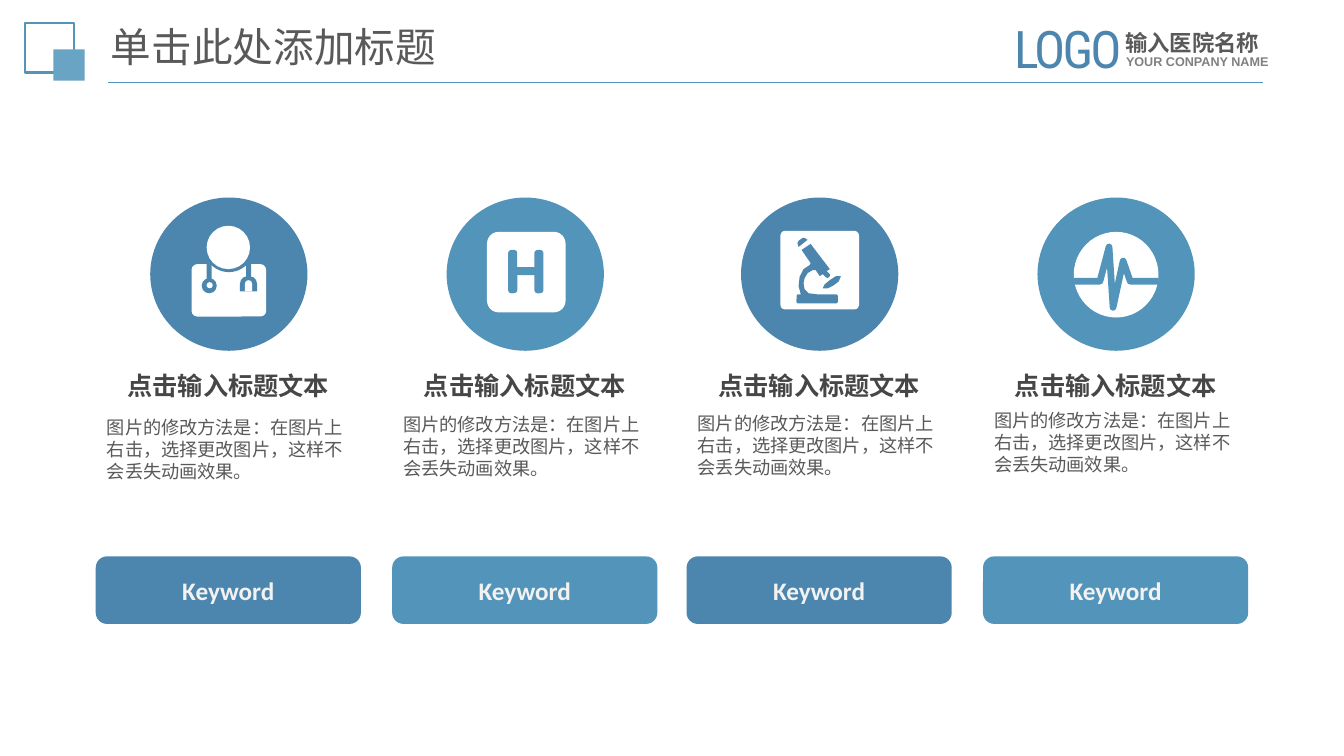
from dataclasses import dataclass

from lxml.etree import SubElement
from pptx import Presentation
from pptx.dml.color import RGBColor as Rgb
from pptx.enum.shapes import MSO_CONNECTOR as Link, MSO_SHAPE as Kind
from pptx.enum.text import MSO_ANCHOR as Anchor, MSO_AUTO_SIZE as Fit, PP_ALIGN as Align
from pptx.oxml.ns import qn
from pptx.shapes.autoshape import Shape
from pptx.slide import Slide
from pptx.text.text import TextFrame
from pptx.util import Inches, Pt

HUES = {
    "deep": "4C86AE", "mid": "5294BA", "pale": "6AA4C4", "white": "FFFFFF",
    "snow": "F2F2F2", "head": "464646", "text": "595959", "grey": "808080",
}
HAN = "Noto Sans CJK SC"
Spot = tuple[float, float]


@dataclass(frozen=True)
class Part:
    kind: Kind
    x: float
    y: float
    w: float
    h: float
    fill: str = ""
    curve: float | None = None
    line: str = ""


@dataclass(frozen=True)
class Path:
    spots: tuple[Spot, ...]
    hue: str
    width: float = 0


@dataclass(frozen=True)
class Style:
    size: float
    hue: str
    face: str = HAN
    bold: bool = False
    lead: float | None = None
    align: Align = Align.LEFT
    anchor: Anchor = Anchor.TOP
    pad: Spot = (0, 0)
    track: int = 0


@dataclass(frozen=True)
class Note:
    text: str
    x: float
    y: float
    w: float
    h: float
    style: Style


@dataclass(frozen=True)
class Column:
    x: float
    top: float
    hue: str
    icon: tuple[Part | Path, ...]


def tint(hue: str) -> Rgb:
    return Rgb.from_string(HUES[hue])


def write(frame: TextFrame, text: str, style: Style) -> None:
    frame.word_wrap = True
    frame.auto_size = Fit.NONE
    frame.vertical_anchor = style.anchor
    frame.margin_left = frame.margin_right = Inches(style.pad[0])
    frame.margin_top = frame.margin_bottom = Inches(style.pad[1])
    para = frame.paragraphs[0]
    para.alignment = style.align
    if style.lead:
        para.line_spacing = style.lead if style.lead < 2 else Pt(style.lead)
    run = para.add_run()
    run.text = text
    font = run.font
    font.size, font.bold, font.name = Pt(style.size), style.bold, style.face
    font.color.rgb = tint(style.hue)
    props = run._r.get_or_add_rPr()
    SubElement(props, qn("a:ea")).set("typeface", HAN)
    if style.track:
        props.set("spc", str(style.track))


def paint(shape: Shape, fill: str, line: str = "", width: float = 1.5) -> None:
    shape.shadow.inherit = False
    if fill:
        shape.fill.solid()
        shape.fill.fore_color.rgb = tint(fill)
    else:
        shape.fill.background()
    if line:
        shape.line.color.rgb = tint(line)
        shape.line.width = Pt(width)
    else:
        shape.line.fill.background()


def stamp(slide: Slide, part: Part) -> Shape:
    box = [Inches(v) for v in (part.x, part.y, part.w, part.h)]
    shape = slide.shapes.add_shape(part.kind, *box)
    if part.curve is not None:
        shape.adjustments[0] = part.curve
    paint(shape, part.fill, part.line)
    return shape


def trace(slide: Slide, path: Path) -> None:
    first, *rest = [(Inches(x), Inches(y)) for x, y in path.spots]
    pen = slide.shapes.build_freeform(*first)
    pen.add_line_segments(rest, close=not path.width)
    shape = pen.convert_to_shape()
    if path.width:
        paint(shape, "", path.hue, path.width)
        SubElement(shape.line._get_or_add_ln(), qn("a:round"))
    else:
        paint(shape, path.hue)


def label(slide: Slide, note: Note) -> None:
    box = [Inches(v) for v in (note.x, note.y, note.w, note.h)]
    write(slide.shapes.add_textbox(*box).text_frame, note.text, note.style)


PAD = (0.1, 0.05)
TITLE = Style(29, "text", lead=0.9, anchor=Anchor.MIDDLE, pad=PAD)
HEAD = Style(18, "head", bold=True, align=Align.CENTER, anchor=Anchor.MIDDLE)
BODY = Style(13, "text", lead=15.7)
KEY = Style(18, "snow", "Calibri", True, align=Align.CENTER,
            anchor=Anchor.MIDDLE, pad=(0.13, 0.07))
BRAND = (
    Note("输入医院名称", 11.06, 0.24, 1.75, 0.37,
         Style(16, "text", "Calibri", True, 19.5, pad=PAD)),
    Note("YOUR CONPANY NAME", 11.07, 0.49, 1.93, 0.25,
         Style(9, "grey", "Arial", True, pad=PAD)),
    Note("LOGO", 9.96, 0.12, 1.41, 0.72,
         Style(37, "deep", "Roboto Condensed", pad=PAD, track=-200)),
)
MARK = (
    Part(Kind.RECTANGLE, 0.25, 0.23, 0.48, 0.49, line="mid"),
    Part(Kind.RECTANGLE, 0.53, 0.49, 0.31, 0.31, "pale"),
)
DOCTOR = (
    Part(Kind.ROUNDED_RECTANGLE, 1.9, 2.62, 0.74, 0.52, "white", 0.11),
    Part(Kind.OVAL, 2.02, 2.2, 0.5, 0.5, "deep"),
    Part(Kind.OVAL, 2.05, 2.24, 0.43, 0.43, "white"),
    Part(Kind.RECTANGLE, 2.05, 2.6, 0.05, 0.18, "deep"),
    Part(Kind.OVAL, 2.0, 2.76, 0.15, 0.15, "deep"),
    Part(Kind.OVAL, 2.05, 2.8, 0.06, 0.06, "white"),
    Part(Kind.RECTANGLE, 2.44, 2.6, 0.05, 0.16, "deep"),
    Part(Kind.ROUND_2_SAME_RECTANGLE, 2.38, 2.74, 0.17, 0.15, "deep", 0.5),
    Part(Kind.ROUND_2_SAME_RECTANGLE, 2.43, 2.78, 0.07, 0.11, "white", 0.5),
)
CLINIC = (
    Part(Kind.ROUNDED_RECTANGLE, 4.83, 2.3, 0.78, 0.8, "white", 0.15),
    Part(Kind.ROUNDED_RECTANGLE, 5.04, 2.48, 0.09, 0.43, "mid", 0.35),
    Part(Kind.ROUNDED_RECTANGLE, 5.3, 2.48, 0.09, 0.43, "mid", 0.35),
    Part(Kind.RECTANGLE, 5.12, 2.65, 0.2, 0.08, "mid"),
)
SCOPE = (
    Part(Kind.ROUNDED_RECTANGLE, 7.74, 2.29, 0.78, 0.78, "white", 0.06),
    Path(((7.91, 2.41), (7.92, 2.39), (7.96, 2.36), (7.98, 2.36),
          (8.01, 2.38), (7.92, 2.45)), "deep"),
    Path(((7.95, 2.48), (8.04, 2.42), (8.23, 2.67), (8.2, 2.69), (8.23, 2.72),
          (8.23, 2.74), (8.21, 2.76), (8.19, 2.75), (8.16, 2.72), (8.13, 2.74),
          (8.09, 2.68), (8.06, 2.68), (8.01, 2.71), (7.98, 2.76), (7.97, 2.81),
          (7.98, 2.87), (8.02, 2.91), (8.1, 2.92), (8.1, 2.95), (7.94, 2.95),
          (7.94, 2.91), (7.92, 2.84), (7.93, 2.75), (7.97, 2.67), (8.03, 2.63),
          (8.04, 2.61)), "deep"),
    Part(Kind.ROUNDED_RECTANGLE, 7.9, 2.92, 0.41, 0.09, "deep", 0.2),
    Path(((8.16, 2.86), (8.18, 2.82), (8.23, 2.78), (8.29, 2.74), (8.34, 2.74),
          (8.32, 2.79), (8.27, 2.83), (8.21, 2.86)), "deep"),
)
PULSE = (
    Part(Kind.OVAL, 10.65, 2.3, 0.84, 0.85, "white"),
    Path(((10.65, 2.79), (10.91, 2.79), (11.0, 2.45), (11.04, 3.05),
          (11.14, 2.59), (11.21, 2.79), (11.49, 2.79)), "mid", 4.75),
)
COLUMNS = (
    Column(0.95, 4.13, "deep", DOCTOR),
    Column(3.89, 4.1, "mid", CLINIC),
    Column(6.81, 4.09, "deep", SCOPE),
    Column(9.75, 4.06, "mid", PULSE),
)


def header(slide: Slide) -> None:
    title = slide.shapes.title
    title.left, title.top = Inches(1), Inches(0.25)
    title.width, title.height = Inches(8.6), Inches(0.48)
    write(title.text_frame, "单击此处添加标题", TITLE)
    ends = [Inches(v) for v in (1.07, 0.82, 12.53, 0.82)]
    rule = slide.shapes.add_connector(Link.STRAIGHT, *ends)
    rule.line.color.rgb = tint("mid")
    rule.line.width = Pt(1.25)
    SubElement(rule._element.spPr, qn("a:effectLst"))
    for part in MARK:
        stamp(slide, part)
    for note in BRAND:
        label(slide, note)


def column(slide: Slide, col: Column) -> None:
    left = col.x + 0.11
    label(slide, Note("点击输入标题文本", left, 3.66, 2.41, 0.32, HEAD))
    label(slide, Note("图片的修改方法是：在图片上右击，选择更改图片，这样不会丢失动画效果。",
                      left, col.top, 2.41, 0.67, BODY))
    stamp(slide, Part(Kind.OVAL, col.x + 0.54, 1.96, 1.56, 1.52, col.hue))
    key = stamp(slide, Part(Kind.ROUNDED_RECTANGLE, col.x, 5.52, 2.63, 0.67, col.hue))
    write(key.text_frame, "Keyword", KEY)
    for item in col.icon:
        if isinstance(item, Part):
            stamp(slide, item)
        else:
            trace(slide, item)


def main() -> None:
    deck = Presentation()
    deck.slide_width, deck.slide_height = Inches(13.33), Inches(7.5)
    slide = deck.slides.add_slide(deck.slide_layouts[5])
    header(slide)
    for col in COLUMNS:
        column(slide, col)
    deck.save("out.pptx")


if __name__ == "__main__":
    main()
